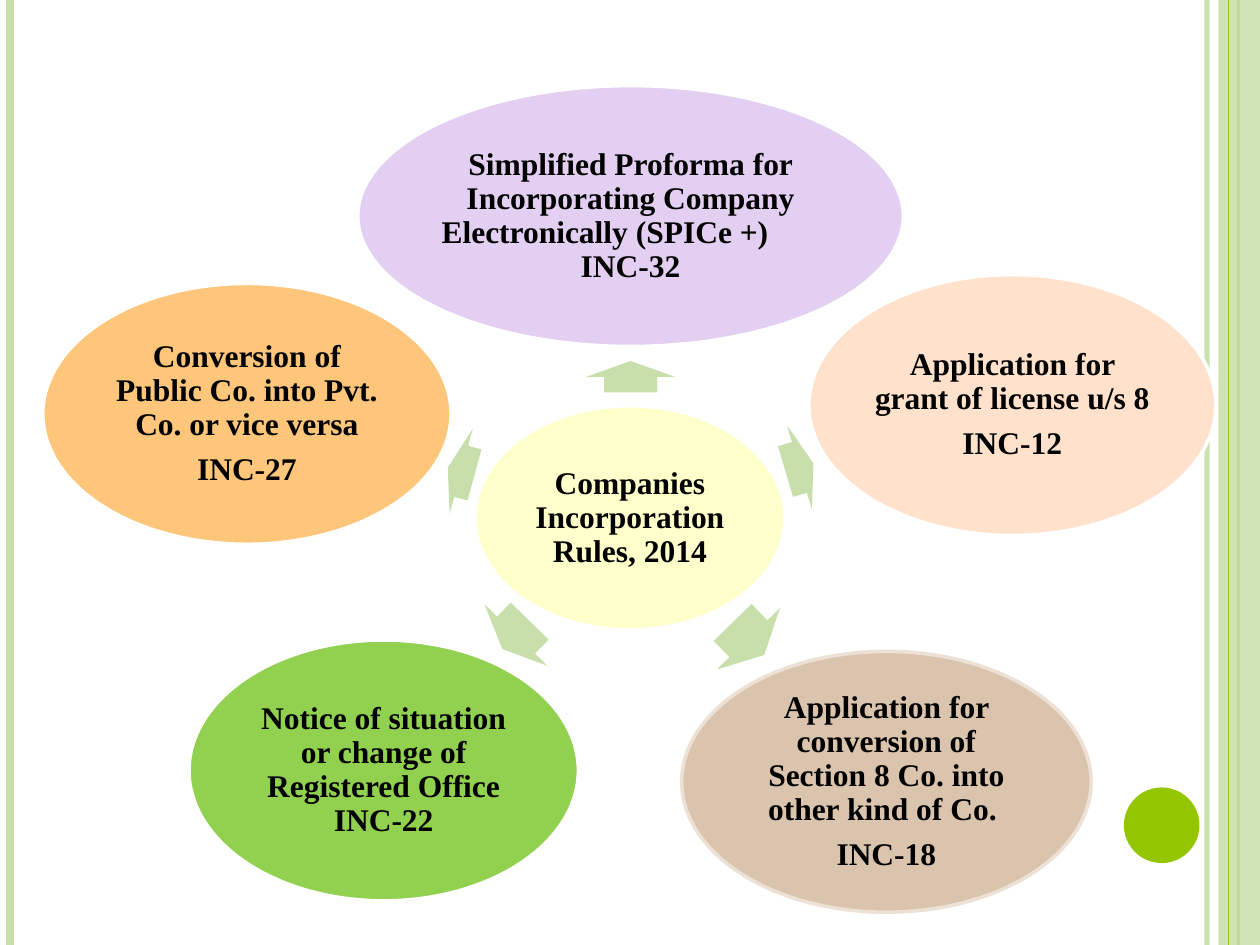
from lxml import etree
from pptx import Presentation
from pptx.dml.color import RGBColor
from pptx.enum import shapes, text
from pptx.oxml.ns import qn
from pptx.util import Inches, Pt

KIND = shapes.MSO_SHAPE


def paint(fill, hue, alpha=100):
    fill.solid()
    fill.fore_color.rgb = RGBColor.from_string(hue)
    if alpha < 100:
        tone = fill._xPr.find(".//" + qn("a:srgbClr"))
        etree.SubElement(tone, qn("a:alpha"), val=str(alpha * 1000))


def draw(kind, box, hue, edge=None, alpha=100):
    item = page.shapes.add_shape(kind, *[Inches(n) for n in box])
    item.shadow.inherit = False
    paint(item.fill, hue, alpha)
    if edge:
        paint(item.line.fill, edge)
        item.line.width = Pt(2)
    else:
        item.line.fill.background()
    return item


deck = Presentation()
deck.slide_width, deck.slide_height = Inches(10), Inches(7.5)
page = deck.slides.add_slide(deck.slide_layouts[6])

# Side stripes: x, colour, width, opacity
stripes = [
    (9.58, "C8DFAB", 3, 93),
    (0.08, "C8DFAB", 4.5, 100),
    (9.83, "94C600", 1.5, 100),
    (9.75, "94C600", 0.75, 100),
]
for x, hue, width, alpha in stripes:
    if x == 9.75:  # the band lies under the last stripe only
        draw(KIND.RECTANGLE, (9.67, 0, 0.33, 7.5), "C8DFAB", alpha=87)
    line = page.shapes.add_connector(
        shapes.MSO_CONNECTOR.STRAIGHT, Inches(x), 0, Inches(x), Inches(7.5))
    paint(line.line.fill, hue, alpha)
    line.line.width = Pt(width)
    etree.SubElement(line._element.spPr, qn("a:effectLst"))

# Corner dot
draw(KIND.OVAL, (8.92, 6.25, 0.6, 0.6), "94C600")

# Hub and forms: box, fill, edge, paragraphs
white = "FFFFFF"
nodes = [
    ((3.77, 3.22, 2.46, 1.78), "FFFFCC", white,
     ["Companies Incorporation Rules, 2014"]),
    ((2.84, 0.68, 4.33, 2.07), "E2CFF1", white,
     ["Simplified Proforma for Incorporating Company "
      "Electronically (SPICe +)  \tINC-32"]),
    ((6.42, 2.18, 3.23, 2.07), "FFE1CC", white,
     ["Application for grant of license u/s 8 ", "INC-12"]),
    ((5.41, 5.17, 3.25, 2.07), "DBC4AE", "EDE1D6",
     ["Application for conversion of Section 8 Co. into other kind of Co. ",
      "INC-18"]),
    ((1.5, 5.08, 3.09, 2.07), "92D050", white,
     ["Notice of situation or change of Registered Office INC-22"]),
    ((0.34, 2.25, 3.24, 2.07), "FEC67A", white,
     ["Conversion of Public Co. into Pvt. Co. or vice versa", "INC-27"]),
]

# Arrows from the hub to each form: left, top, width, turn
arrows = [
    (4.88, 2.64, 0.25, 270),
    (6.23, 3.36, 0.23, 343.5),
    (5.76, 4.72, 0.36, 45.8),
    (3.94, 4.69, 0.31, 134.3),
    (3.55, 3.39, 0.22, 195.2),
]

for node, arrow in zip(nodes, [None] + arrows):
    if arrow:
        x, y, width, turn = arrow
        tip = draw(KIND.RIGHT_ARROW, (x, y, width, 0.7), "C8DFAB")
        tip.adjustments[0], tip.adjustments[1] = 0.6, 0.5
        tip.rotation = turn

    box, hue, edge, words = node
    frame = draw(KIND.OVAL, box, hue, edge).text_frame
    frame.word_wrap = True
    frame.vertical_anchor = text.MSO_ANCHOR.MIDDLE
    frame.margin_left = frame.margin_right = Inches(0.03)
    frame.margin_top = frame.margin_bottom = Inches(0.03)
    frame.text = "\n".join(words)
    for para in frame.paragraphs:
        para.alignment = text.PP_ALIGN.CENTER
        para.line_spacing = 0.9
        para.space_after = Pt(6.3)
        para.font.name = "Times New Roman"
        para.font.size = Pt(18)
        para.font.bold = True
        para.font.color.rgb = RGBColor.from_string("000000")

deck.save("out.pptx")
